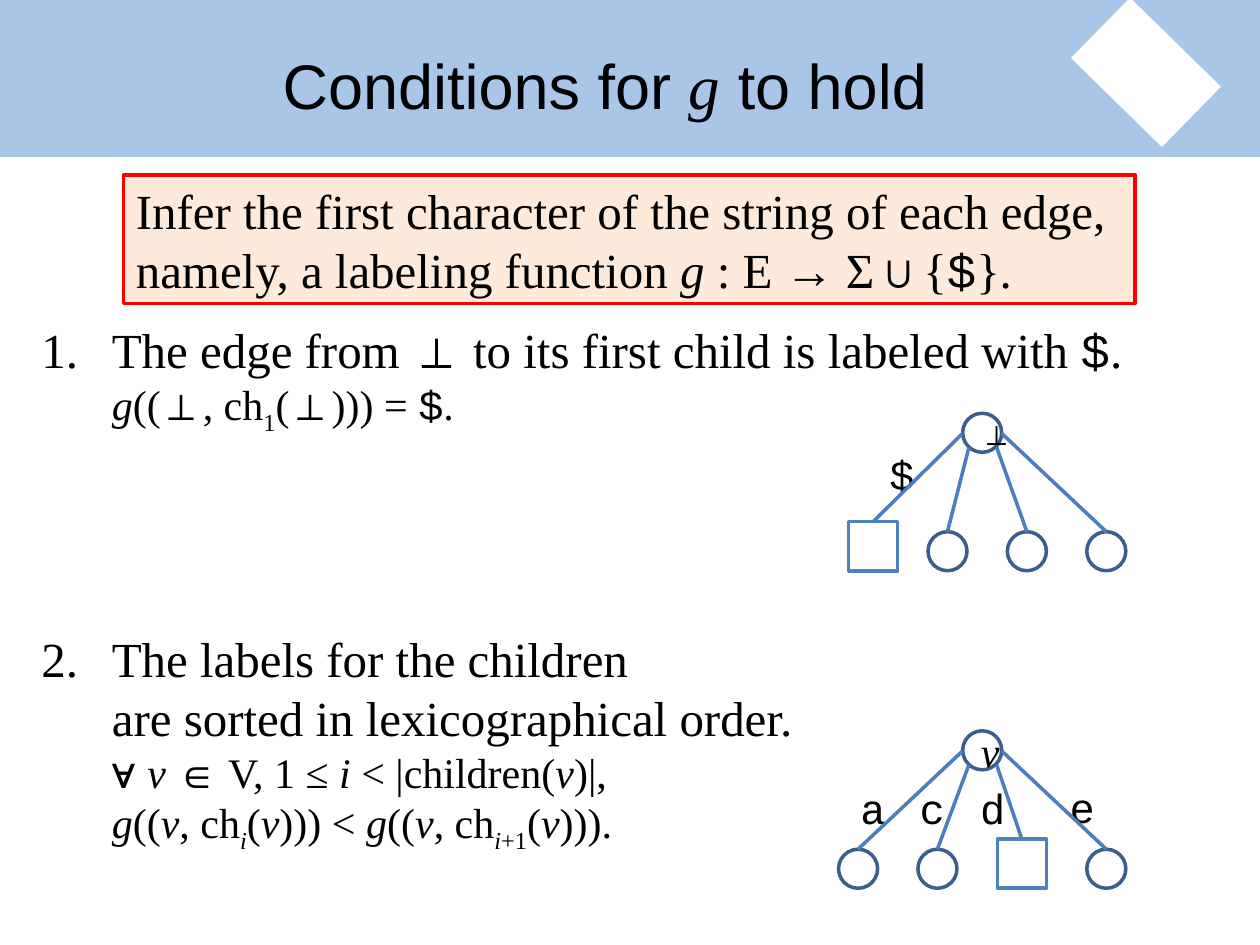
from pptx import Presentation
from pptx import util as u
from pptx.dml.color import RGBColor
from pptx.enum import shapes, text
from pptx.oxml import xmlchemy
from lxml import etree
from pptx.oxml.ns import qn

Inches = u.Inches
THEME = {
    "black": "000000", "white": "FFFFFF", "header": "558ED5",
    "box fill": "FDEADA", "box line": "FF0000",
    "circle line": "3A5F8C", "square line": "4F81BD", "edge": "4B7EBC",
    "title": 36, "large": 28, "medium": 24, "small": 18,
}
STYLES = {
    "plain": {"name": "Times New Roman", "italic": False},
    "italic": {"name": "Times New Roman", "italic": True},
    "code": {"name": "Courier New", "italic": False},
    "heading": {"name": "Arial", "italic": False},
}


def write(para, size, *spans):
    """Add (text, style, optional baseline) spans; a newline is a line break."""
    for words, style, *baseline in spans:
        for number, line in enumerate(words.split("\n")):
            if number:
                para.add_line_break()
            if not line:
                continue
            span = para.add_run()
            span.text = line
            span.font.size = u.Pt(THEME[size])
            span.font.color.rgb = RGBColor.from_string(THEME["black"])
            for key, value in STYLES[style].items():
                setattr(span.font, key, value)
            if baseline:
                span.font._element.set("baseline", str(baseline[0]))


def add_outlined(kind, bounds, fill, line):
    shape = page.shapes.add_shape(kind, *map(Inches, bounds))
    shape.shadow.inherit = False
    shape.fill.solid()
    shape.fill.fore_color.rgb = RGBColor.from_string(THEME[fill])
    shape.line.color.rgb = RGBColor.from_string(THEME[line])
    shape.line.width = u.Pt(2)
    return shape


deck = Presentation()
deck.slide_width, deck.slide_height = Inches(10), Inches(7.5)
page = deck.slides.add_slide(deck.slide_layouts[5])
RECT, OVAL = shapes.MSO_SHAPE.RECTANGLE, shapes.MSO_SHAPE.OVAL

# Header band and its rotated block
band = page.shapes.add_connector(
    shapes.MSO_CONNECTOR.STRAIGHT, 0, Inches(0.62), Inches(10), Inches(0.62))
band.line.width = u.Pt(90)
band.line.color.rgb = RGBColor.from_string(THEME["header"])
color = band.line.fill._xPr.find(".//" + qn("a:srgbClr"))
etree.SubElement(color, qn("a:alpha")).set("val", "50000")
etree.SubElement(band.element.spPr, qn("a:effectLst"))
block = add_outlined(RECT, (8.59, 0.24, 1.01, 0.67), "white", "white")
block.line.fill.background()
block.rotation = 44.4

# Title, brought in front of the band
title = page.shapes.title
title.left, title.top, title.width, title.height = map(
    Inches, (0.23, 0.16, 9.14, 1.02))
title.text_frame.vertical_anchor = text.MSO_ANCHOR.MIDDLE
para = title.text_frame.paragraphs[0]
para.alignment = text.PP_ALIGN.CENTER
write(para, "title", ("Conditions for ", "heading"), ("g", "italic"),
      (" to hold", "heading"))
title.element.getparent().append(title.element)

# Numbered conditions
body = page.shapes.add_textbox(*map(Inches, (0.23, 2.49, 9.53, 4.21)))
body.text_frame.word_wrap = True
first = body.text_frame.paragraphs[0]
second = body.text_frame.add_paragraph()
second.space_before = u.Pt(110)
for para in (first, second):
    properties = para._p.get_or_add_pPr()
    properties.set("marL", str(Inches(0.56)))
    properties.set("indent", str(-Inches(0.56)))
    etree.SubElement(properties, qn("a:buFont")).set("typeface", "+mj-lt")
    etree.SubElement(properties, qn("a:buAutoNum")).set("type", "arabicPeriod")
write(first, "large",
      ("The edge from ⊥ to its first child is labeled with ", "plain"),
      ("$", "code"), (".\n", "plain"))
write(first, "medium", ("g", "italic"), ("((⊥, ch", "plain"),
      ("1", "plain", -25000), ("(⊥))) = ", "plain"), ("$", "code"),
      (".", "plain"))
write(second, "large",
      ("The labels for the children\n"
       "are sorted in lexicographical order.\n", "plain"))
write(second, "medium", ("∀ ", "plain"), ("v ", "italic"),
      ("∈ V, 1 ≤ ", "plain"), ("i", "italic"), (" < |children(", "plain"),
      ("v", "italic"), (")|,\n", "plain"))
for subscript, ending in (("", "))) < "), ("+1", "))).")):
    write(second, "medium", ("g", "italic"), ("((", "plain"), ("v", "italic"),
          (", ch", "plain"), ("i", "italic", -25000),
          (subscript, "plain", -25000), ("(", "plain"), ("v", "italic"),
          (ending, "plain"))

# Trees: root, edge labels (text, left, top), child centres, square child
TREES = [
    {"top": 3.28, "root": ("⊥", "small", "plain"), "square": 0,
     "labels": [("$", 6.96, 3.51)], "centres": (6.93, 7.52, 8.15, 8.78)},
    {"top": 5.8, "root": ("v", "medium", "italic"), "square": 2,
     "labels": [("a", 6.73, 6.16), ("c", 7.2, 6.16), ("d", 7.68, 6.16),
                ("e", 8.39, 6.15)],
     "centres": (6.81, 7.44, 8.11, 8.78)},
]
ROOT_SITES = (2, 3, 5, 6)  # left, lower left, lower right, right
CIRCLE, SQUARE, TREE_HEIGHT = 0.31, 0.39, 1.25

for tree in TREES:
    root = add_outlined(OVAL, (7.64, tree["top"], CIRCLE, CIRCLE),
                        "white", "circle line")
    root.text_frame.vertical_anchor = text.MSO_ANCHOR.MIDDLE
    para = root.text_frame.paragraphs[0]
    para.alignment = text.PP_ALIGN.CENTER
    symbol, size, style = tree["root"]
    write(para, size, (symbol, style))
    for letter, left, top in tree["labels"]:
        label = page.shapes.add_textbox(*map(Inches, (left, top, 0.4, 0.5)))
        label.text_frame.word_wrap = False
        label.text_frame.auto_size = text.MSO_AUTO_SIZE.SHAPE_TO_FIT_TEXT
        write(label.text_frame.paragraphs[0], "medium", (letter, "code"))
    for index, (centre, site) in enumerate(zip(tree["centres"], ROOT_SITES)):
        kind, side, line = ((RECT, SQUARE, "square line")
                            if index == tree["square"]
                            else (OVAL, CIRCLE, "circle line"))
        bottom = tree["top"] + TREE_HEIGHT
        child = add_outlined(
            kind, (centre - side / 2, bottom - side, side, side), "white", line)
        start_x = (7.64, 7.69, 7.91, 7.95)[index]
        start_y = tree["top"] + (0.16 if site in (2, 6) else 0.27)
        edge = page.shapes.add_connector(
            shapes.MSO_CONNECTOR.STRAIGHT,
            *map(Inches, (start_x, start_y, centre, bottom - side)))
        # Sites of an ellipse differ from those python-pptx assumes, so the
        # root end keeps its coordinates and only the child end is joined.
        edge.end_connect(child, 0)
        edge.line.width = u.Pt(2)
        edge.line.color.rgb = RGBColor.from_string(THEME["edge"])
        etree.SubElement(edge.element.spPr, qn("a:effectLst"))

# Goal
goal = add_outlined(RECT, (0.98, 1.39, 8.03, 1.02), "box fill", "box line")
goal.text_frame.vertical_anchor = text.MSO_ANCHOR.MIDDLE
para = goal.text_frame.paragraphs[0]
para.alignment = text.PP_ALIGN.LEFT
write(para, "large",
      ("Infer the first character of the string of each edge, "
       "namely, a labeling function ", "plain"),
      ("g", "italic"), (" : E → Σ∪{", "plain"), ("$", "code"),
      ("}.", "plain"))

deck.save("out.pptx")
